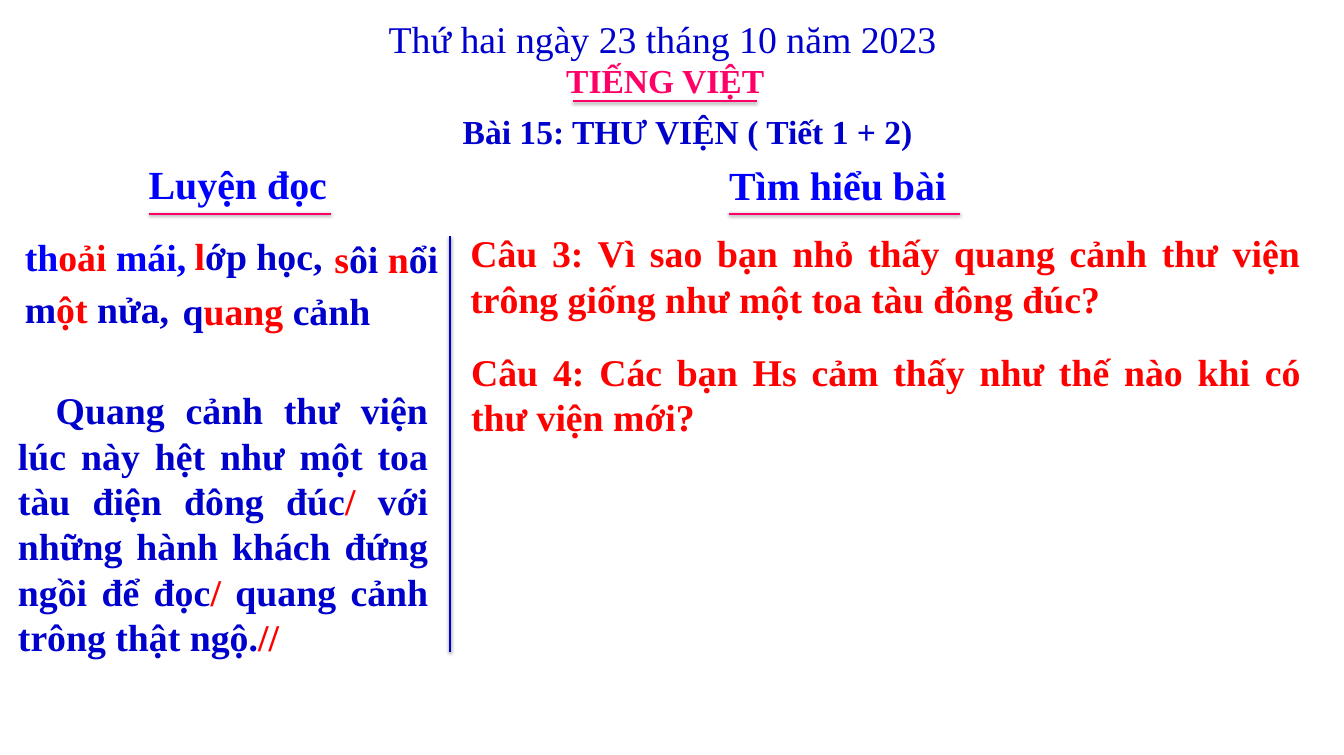
from pptx import Presentation
from pptx.dml.color import RGBColor
from pptx.enum.shapes import MSO_CONNECTOR
from pptx.enum.text import MSO_AUTO_SIZE, PP_ALIGN as Align
from pptx.util import Inches, Pt

FONT = "Times New Roman"
NAVY, BLUE, RED, PINK = "0000CC", "0000FF", "FF0000", "FF0066"


def paint(color_format, color):
    """Apply a hex colour to a font or line colour."""
    color_format.rgb = RGBColor.from_string(color)


def add_text(slide, place, pieces, size=36, bold=True, align=Align.JUSTIFY,
             wrap=True, inset=(0.1, 0.05), indent=0):
    """Add a one-paragraph text box made of (text, colour) pieces."""
    box = slide.shapes.add_textbox(*map(Inches, place))
    frame = box.text_frame
    frame.word_wrap = wrap
    frame.auto_size = MSO_AUTO_SIZE.SHAPE_TO_FIT_TEXT
    frame.margin_left = frame.margin_right = Inches(inset[0])
    frame.margin_top = frame.margin_bottom = Inches(inset[1])
    para = frame.paragraphs[0]
    para.alignment = align
    if indent:
        properties = para._p.get_or_add_pPr()
        properties.set("marL", "0")
        properties.set("indent", str(Inches(indent)))
    for text, color in pieces:
        span = para.add_run()
        span.text = text
        span.font.name = FONT
        span.font.size = Pt(size)
        span.font.bold = bold
        paint(span.font.color, color)


def add_rule(slide, start, end, color):
    """Draw a straight 2 pt line that keeps the soft shadow of the theme."""
    rule = slide.shapes.add_connector(
        MSO_CONNECTOR.STRAIGHT, *map(Inches, (*start, *end)))
    rule.line.width = Pt(2)
    paint(rule.line.color, color)


def add_heading(slide, place, text, rule_left, rule_right):
    """Add a column heading with its underline."""
    add_text(slide, place, [(text, BLUE)], size=38, align=Align.CENTER,
             inset=(0.08, 0.04))
    add_rule(slide, (rule_left, 2.83), (rule_right, 2.83), PINK)


def add_title(slide):
    """Add the date, the subject and the lesson name."""
    add_text(slide, (5.05, 0.16, 7.53, 0.71),
             [("Thứ hai ngày 23 tháng 10 năm 2023", NAVY)],
             bold=False, align=Align.LEFT, wrap=False)
    add_text(slide, (7.4, 0.75, 2.85, 0.64), [("TIẾNG VIỆT", PINK)],
             size=32, align=Align.LEFT, wrap=False)
    add_rule(slide, (7.59, 1.34), (10.03, 1.34), PINK)
    add_text(slide, (4.32, 1.39, 9.58, 0.7),
             [("Bài 15: THƯ VIỆN ( Tiết 1 + 2)", NAVY)],
             size=32, align=Align.CENTER, inset=(0.16, 0.08))


def add_reading(slide):
    """Add the words and the passage for reading practice."""
    add_heading(slide, (1.88, 2.07, 2.54, 0.72), "Luyện đọc", 1.97, 4.38)
    words = [
        (0.23, 3.05, 2.72, [("th", BLUE), ("oải", RED), (" mái, ", BLUE)]),
        (2.48, 3.04, 2.13, [("l", RED), ("ớp học, ", NAVY)]),
        (4.33, 3.08, 1.65,
         [("s", RED), ("ôi ", NAVY), ("n", RED), ("ổi", NAVY)]),
        (0.23, 3.73, 2.31, [("m", NAVY), ("ột", RED), (" nửa,", NAVY)]),
        (2.32, 3.76, 3.33, [("q", NAVY), ("uang", RED), (" cảnh", NAVY)]),
    ]
    for left, top, width, pieces in words:
        add_text(slide, (left, top, width, 0.71), pieces)
    passage = [
        ("Quang cảnh thư viện lúc này hệt như một toa tàu điện đông đúc", NAVY),
        ("/", RED),
        (" với những hành khách đứng ngồi để đọc", NAVY),
        ("/ ", RED),
        ("quang cảnh trông thật ngộ.", NAVY),
        ("//", RED),
    ]
    add_text(slide, (0.14, 5.08, 5.63, 3.74), passage, indent=0.5)


def add_questions(slide):
    """Add the comprehension questions."""
    add_heading(slide, (9.57, 2.09, 3.05, 0.72), "Tìm hiểu bài", 9.65, 12.72)
    questions = [
        (6.13, 3, "Câu 3: Vì sao bạn nhỏ thấy quang cảnh thư viện "
                  "trông giống như một toa tàu đông đúc?"),
        (6.14, 4.57, "Câu 4: Các bạn Hs cảm thấy như thế nào khi có "
                     "thư viện mới?"),
    ]
    for left, top, question in questions:
        add_text(slide, (left, top, 11.19, 1.31), [(question, RED)])


def main():
    """Build and save the lesson slide."""
    deck = Presentation()
    deck.slide_width, deck.slide_height = Inches(17.8), Inches(10)
    slide = deck.slides.add_slide(deck.slide_layouts[6])
    add_title(slide)
    add_reading(slide)
    add_rule(slide, (5.96, 3.13), (5.96, 8.63), NAVY)
    add_questions(slide)
    deck.save("out.pptx")


if __name__ == "__main__":
    main()
